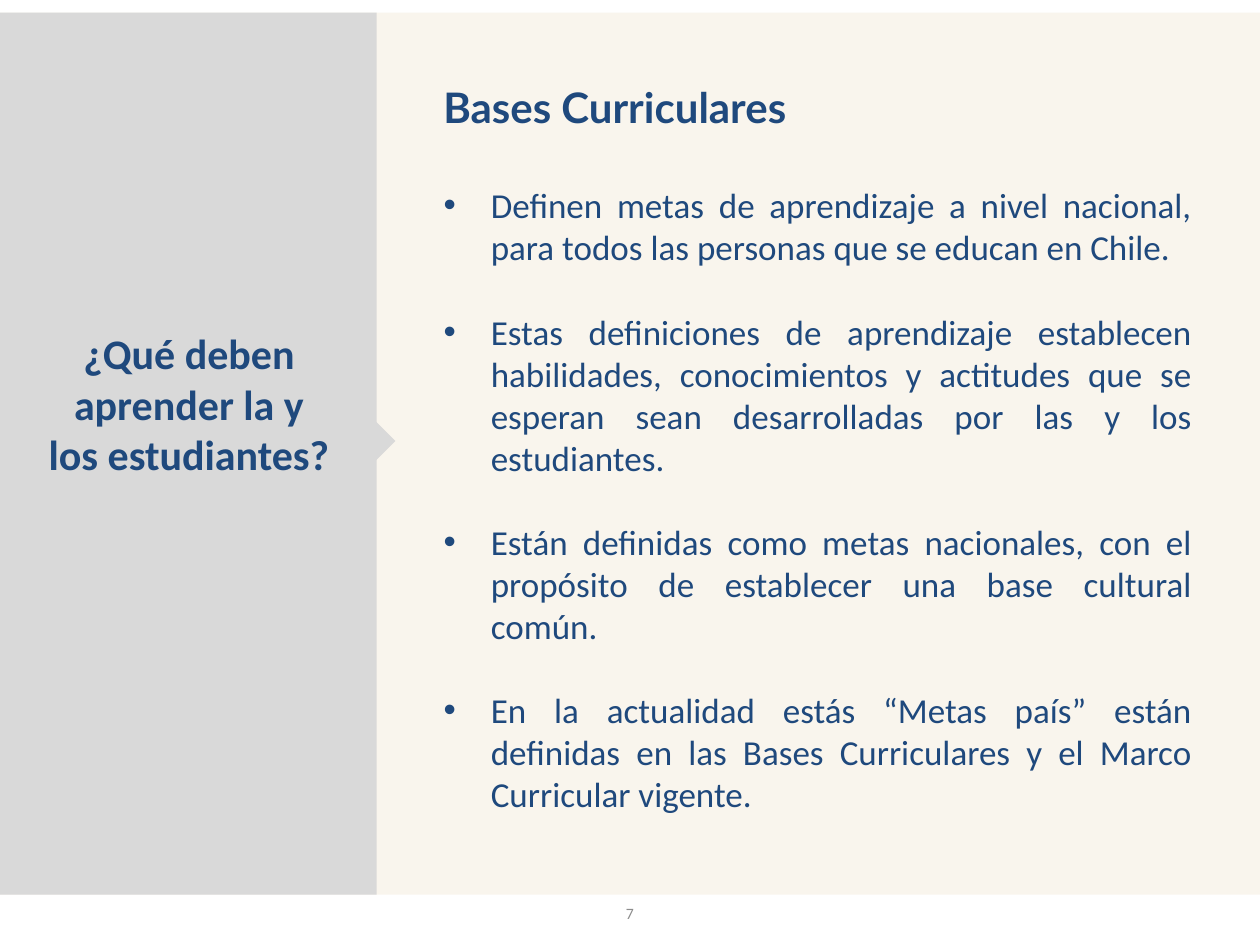
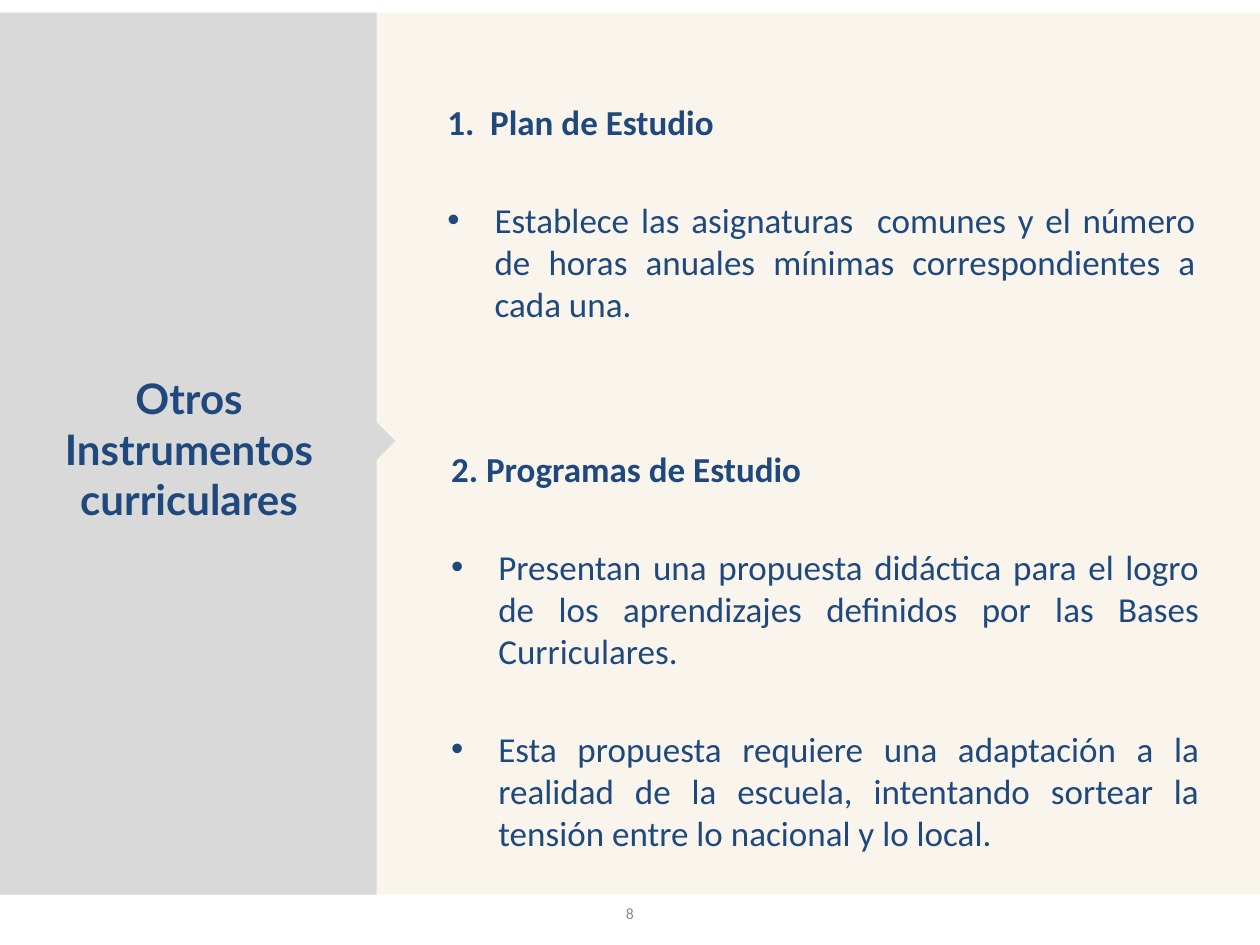
from pptx import Presentation
from pptx.dml.color import RGBColor
from pptx.enum.shapes import MSO_SHAPE
from pptx.enum.text import MSO_ANCHOR, MSO_AUTO_SIZE, PP_ALIGN
from pptx.oxml.ns import qn
from pptx.util import Inches, Pt

RECT = MSO_SHAPE.RECTANGLE
TOP, MIDDLE = MSO_ANCHOR.TOP, MSO_ANCHOR.MIDDLE
LEFT, CENTER, JUSTIFY = PP_ALIGN.LEFT, PP_ALIGN.CENTER, PP_ALIGN.JUSTIFY
NO_FIT = MSO_AUTO_SIZE.NONE

COLORS = {"navy": "1F497D", "cream": "F9F5ED", "panel": "D9D9D9", "number": "8C8C8C"}
WIDTH, HEIGHT = 10, 7.5
BAND_TOP, BAND_HEIGHT = 0.1, 7
PANEL_WIDTH = 2.99
POINTER = 0.33
TITLE_LEFT, TITLE_WIDTH = 0.28, 2.44
BODY_WIDTH = 6.14
ONE_BODY, TWO_BODIES = 1, 3  # layouts of the default template

GOALS = [
    "Definen metas de aprendizaje a nivel nacional, para todos las personas "
    "que se educan en Chile.",
    "Estas definiciones de aprendizaje establecen habilidades, conocimientos y "
    "actitudes que se esperan sean desarrolladas por las y los estudiantes.",
    "Están definidas como metas nacionales, con el propósito de establecer una "
    "base cultural común.",
    "En la actualidad estás “Metas país” están definidas en las Bases "
    "Curriculares y el Marco Curricular vigente.",
]
PLAN = [
    "Establece las asignaturas  comunes y el número de horas anuales mínimas "
    "correspondientes a cada una.",
]
PROGRAMS = [
    "Presentan una propuesta didáctica para el logro de los aprendizajes "
    "definidos por las Bases Curriculares.",
    "Esta propuesta requiere una adaptación a la realidad de la escuela, "
    "intentando sortear la tensión entre lo nacional y lo local.",
]


def rgb(name):
    return RGBColor.from_string(COLORS[name])


def place(sp, left, top, width, height):
    sp.left, sp.top, sp.width, sp.height = map(Inches, (left, top, width, height))


def prepare(sp, anchor=TOP):
    """Give the text frame wrapping, a fixed size and an anchor."""
    tf = sp.text_frame
    tf.word_wrap = True
    tf.auto_size = NO_FIT
    tf.vertical_anchor = anchor
    return tf


def write(p, text, size, align, font="Calibri", bold=False, color="navy", before=0):
    p.alignment = align
    p.line_spacing = 1.0
    p.space_before = Pt(before)
    r = p.add_run()
    r.text = text
    r.font.name, r.font.size, r.font.bold = font, Pt(size), bold
    r.font.color.rgb = rgb(color)


def remove_bullet(p):
    pPr = p._p.get_or_add_pPr()
    pPr.set("marL", "0")
    pPr.set("indent", "0")
    pPr.append(pPr.makeelement(qn("a:buNone"), {}))


def add_block(slide, left, top, width, height, color, rotation=0):
    sp = slide.shapes.add_shape(RECT, *map(Inches, (left, top, width, height)))
    sp.fill.solid()
    sp.fill.fore_color.rgb = rgb(color)
    sp.line.fill.background()
    sp.shadow.inherit = False
    sp.rotation = rotation
    return sp


def decorate_master(prs, slide):
    """Build the bands on a slide, then move them to the back of the master."""
    pointer_top = BAND_TOP + (BAND_HEIGHT - POINTER) / 2 - 0.1
    blocks = [
        add_block(slide, 0, BAND_TOP, WIDTH, BAND_HEIGHT, "cream"),
        add_block(slide, 0, BAND_TOP, PANEL_WIDTH, BAND_HEIGHT, "panel"),
        add_block(slide, 2.74, pointer_top, POINTER, POINTER, "panel", 315),
    ]
    tree = prs.slide_master.shapes._spTree
    for i, sp in enumerate(blocks):
        sp._element.nvSpPr.cNvPr.set("id", str(100 + i))
        tree.insert(2 + i, sp._element)


def add_text(slide, text, box, size, align, anchor=TOP, **style):
    sp = slide.shapes.add_textbox(*map(Inches, box))
    write(prepare(sp, anchor).paragraphs[0], text, size, align, **style)


def set_panel_title(slide, text, top, height, font):
    sp = slide.shapes.title
    place(sp, TITLE_LEFT, top, TITLE_WIDTH, height)
    write(prepare(sp).paragraphs[0], text, 24, CENTER, font=font, bold=True)


def fill_body(sp, left, top, height, bullets, gap, heading=None):
    """Fill a body placeholder with bullets, under an optional bold heading."""
    place(sp, left, top, BODY_WIDTH, height)
    tf = prepare(sp)
    lines = ([heading] if heading else []) + bullets
    for i, text in enumerate(lines):
        p = tf.add_paragraph() if i else tf.paragraphs[0]
        is_heading = text == heading
        write(p, text, 20, JUSTIFY, bold=is_heading, before=gap if i else 0)
        if is_heading:
            remove_bullet(p)


def add_slide(prs, layout, number):
    slide = prs.slides.add_slide(prs.slide_layouts[layout])
    add_text(slide, str(number), (0, 7, WIDTH, 0.5), 9, CENTER, MIDDLE, color="number")
    return slide


def main():
    prs = Presentation()
    prs.slide_width, prs.slide_height = Inches(WIDTH), Inches(HEIGHT)

    slide = add_slide(prs, ONE_BODY, 7)
    decorate_master(prs, slide)
    set_panel_title(slide, "¿Qué deben aprender la y los estudiantes?", 2.55, 1.31, "Calibri")
    add_text(slide, "Bases Curriculares", (3.42, 0.6, 5.44, 0.5), 24, LEFT,
             font="Lato", bold=True)
    fill_body(slide.placeholders[1], 3.42, 1.41, 5.15, GOALS, 24)

    slide = add_slide(prs, TWO_BODIES, 8)
    set_panel_title(slide, "Otros Instrumentos curriculares", 2.91, 1.72, "Lato")
    fill_body(slide.placeholders[1], 3.45, 0.75, 2.26, PLAN, 32, "1.  Plan de Estudio")
    fill_body(slide.placeholders[2], 3.48, 3.5, 3.64, PROGRAMS, 32, "2. Programas de Estudio")

    prs.save("out.pptx")


if __name__ == "__main__":
    main()
